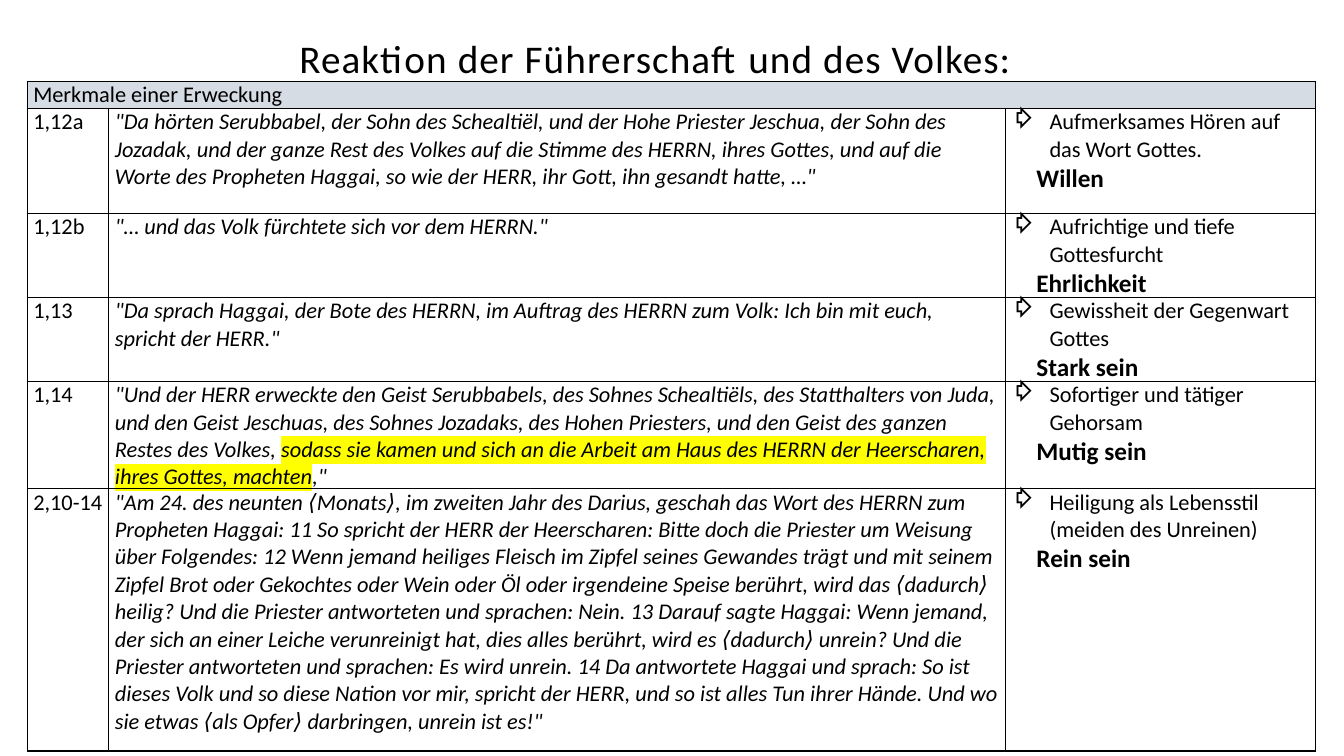
from itertools import groupby

from lxml.etree import SubElement
from pptx import Presentation
from pptx.dml.color import RGBColor
from pptx.enum.text import MSO_ANCHOR as Anchor, MSO_AUTO_SIZE as AutoSize, PP_ALIGN as Align
from pptx.oxml import parse_xml
from pptx.oxml.ns import nsdecls, qn
from pptx.util import Inches, Pt


def color(hex_text):
    return RGBColor.from_string(hex_text)


def write(para, text, size=16, bold=False, italic=False, spacing=None):
    """Text between bars is highlighted; angle brackets are set in Cambria."""
    for index, part in enumerate(text.split("|")):
        for is_bracket, letters in groupby(part, lambda letter: letter in "⟨⟩"):
            span = para.add_run()
            span.text = "".join(letters)
            font = span.font
            font.size, font.bold, font.italic = Pt(size), bold, italic
            font.color.rgb = color("000000")
            props = span._r.get_or_add_rPr()
            if spacing:
                props.set("spc", str(spacing))
            if index % 2:
                mark = SubElement(props, qn("a:highlight"))
                SubElement(mark, qn("a:srgbClr"), val="FFFF00")
            font.name = "Cambria" if is_bracket else "Calibri"


# The long last quotation in two halves
holy_part = (
    '"Am 24. des neunten ⟨Monats⟩, im zweiten Jahr des Darius, geschah das Wort des HERRN zum '
    'Propheten Haggai: 11 So spricht der HERR der Heerscharen: Bitte doch die Priester um Weisung '
    'über Folgendes: 12 Wenn jemand heiliges Fleisch im Zipfel seines Gewandes trägt und mit seinem '
    'Zipfel Brot oder Gekochtes oder Wein oder Öl oder irgendeine Speise berührt, wird das '
    '⟨dadurch⟩ heilig? Und die Priester antworteten und sprachen: Nein. ')
unclean_part = (
    '13 Darauf sagte Haggai: Wenn jemand, der sich an einer Leiche verunreinigt hat, dies alles '
    'berührt, wird es ⟨dadurch⟩ unrein? Und die Priester antworteten und sprachen: Es wird unrein. '
    '14 Da antwortete Haggai und sprach: So ist dieses Volk und so diese Nation vor mir, spricht der '
    'HERR, und so ist alles Tun ihrer Hände. Und wo sie etwas ⟨als Opfer⟩ darbringen, unrein ist es!"')

# Verse, quotation, mark of revival, key word
passages = [
    ("1,12a",
     '"Da hörten Serubbabel, der Sohn des Schealtiël, und der Hohe Priester Jeschua, der Sohn des '
     'Jozadak, und der ganze Rest des Volkes auf die Stimme des HERRN, ihres Gottes, und auf die '
     'Worte des Propheten Haggai, so wie der HERR, ihr Gott, ihn gesandt hatte, …"',
     "Aufmerksames Hören auf das Wort Gottes.", "Willen"),
    ("1,12b",
     '"… und das Volk fürchtete sich vor dem HERRN."',
     "Aufrichtige und tiefe Gottesfurcht", "Ehrlichkeit"),
    ("1,13",
     '"Da sprach Haggai, der Bote des HERRN, im Auftrag des HERRN zum Volk: Ich bin mit euch, '
     'spricht der HERR."',
     "Gewissheit der Gegenwart Gottes", "Stark sein"),
    ("1,14",
     '"Und der HERR erweckte den Geist Serubbabels, des Sohnes Schealtiëls, des Statthalters von '
     'Juda, und den Geist Jeschuas, des Sohnes Jozadaks, des Hohen Priesters, und den Geist des '
     'ganzen Restes des Volkes, |sodass sie kamen und sich an die Arbeit am Haus des HERRN der '
     'Heerscharen, ihres Gottes, machten|,"',
     "Sofortiger und tätiger Gehorsam", "Mutig sein"),
    ("2,10-14", holy_part + unclean_part,
     "Heiligung als Lebensstil (meiden des Unreinen)", "Rein sein"),
]

deck = Presentation()
deck.slide_width, deck.slide_height = Inches(13.33), Inches(7.5)
page = deck.slides.add_slide(deck.slide_layouts[5])

# Title
title = page.shapes.title
title.left, title.top = Inches(2.87), Inches(0.29)
title.width, title.height = Inches(7.33), Inches(0.57)
frame = title.text_frame
frame.word_wrap = False
frame.auto_size = AutoSize.SHAPE_TO_FIT_TEXT
frame.vertical_anchor = Anchor.TOP
frame.paragraphs[0].alignment = Align.LEFT
write(frame.paragraphs[0], "Reaktion der Führerschaft und des Volkes:", size=28, spacing=80)

# Table grid
widths = [0.81, 8.89, 3.08]
heights = [0.26, 1.04, 0.82, 0.82, 1.04, 2.6]
table = page.shapes.add_table(len(heights), len(widths), Inches(0.27), Inches(0.81),
                              Inches(sum(widths)), Inches(sum(heights))).table
table.first_row = table.horz_banding = False
for column, width in zip(table.columns, widths):
    column.width = Inches(width)
for row, height in zip(table.rows, heights):
    row.height = Inches(height)

# Cell margins, fills and borders
for number, row in enumerate(table.rows):
    for cell in row.cells:
        cell.margin_left = cell.margin_right = Inches(0.06)
        cell.margin_top = cell.margin_bottom = 0
        if number == 0:
            cell.fill.solid()
            cell.fill.fore_color.rgb = color("D5DCE4")
        else:
            cell.fill.background()
        for place, side in enumerate("LRTB"):
            border = parse_xml(
                f'<a:ln{side} {nsdecls("a")} w="{Pt(1)}"><a:solidFill>'
                f'<a:srgbClr val="000000"/></a:solidFill></a:ln{side}>')
            cell._tc.get_or_add_tcPr().insert(place, border)

# Heading row
table.cell(0, 0).merge(table.cell(0, 2))
write(table.cell(0, 0).text_frame.paragraphs[0], "Merkmale einer Erweckung")

# Passage rows
for number, (verse, quotation, feature, key_word) in enumerate(passages, start=1):
    write(table.cell(number, 0).text_frame.paragraphs[0], verse)
    write(table.cell(number, 1).text_frame.paragraphs[0], quotation, italic=True)

    frame = table.cell(number, 2).text_frame
    bullet_para, key_para = frame.paragraphs[0], frame.add_paragraph()
    props = bullet_para._p.get_or_add_pPr()
    props.set("marL", str(Inches(0.38)))
    props.set("indent", str(Inches(-0.38)))
    SubElement(props, qn("a:buChar"), char="⇨")
    key_para._p.get_or_add_pPr().set("marL", str(Inches(0.25)))
    write(bullet_para, feature)
    write(key_para, key_word, size=18, bold=True)

deck.save("out.pptx")
